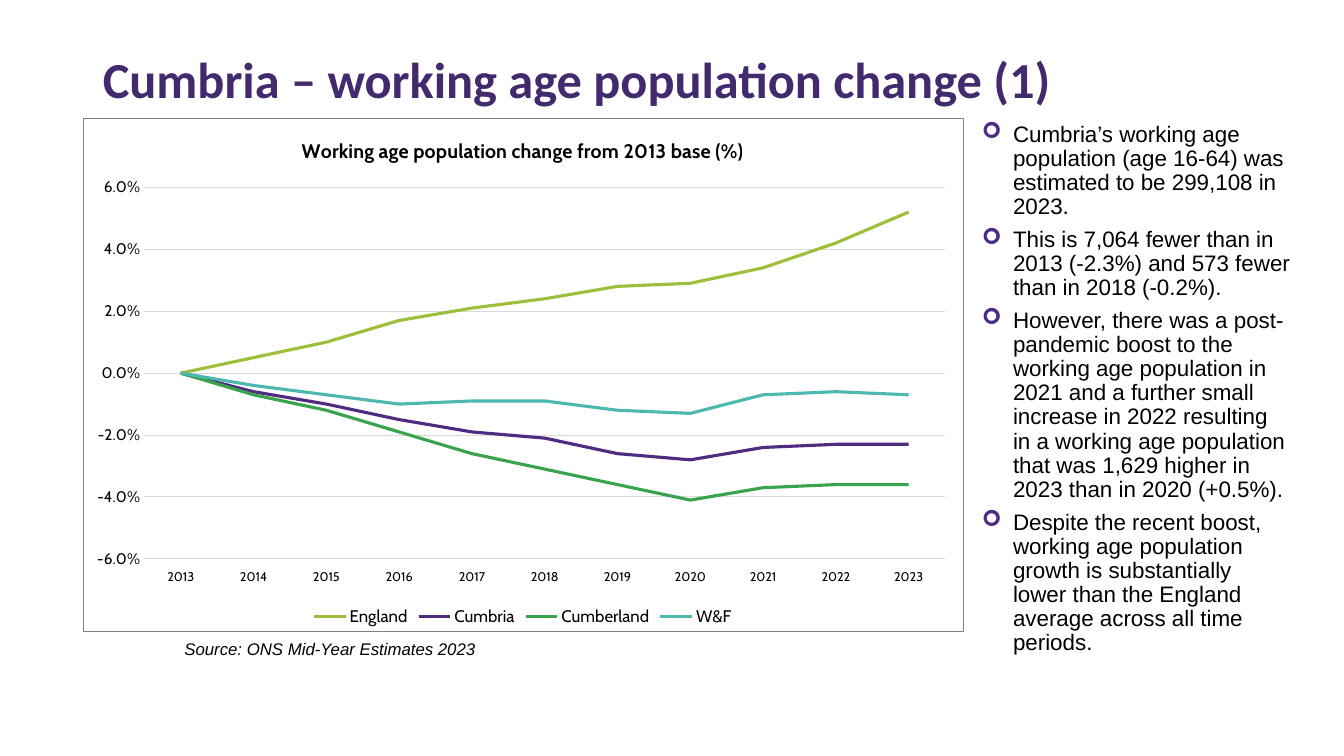
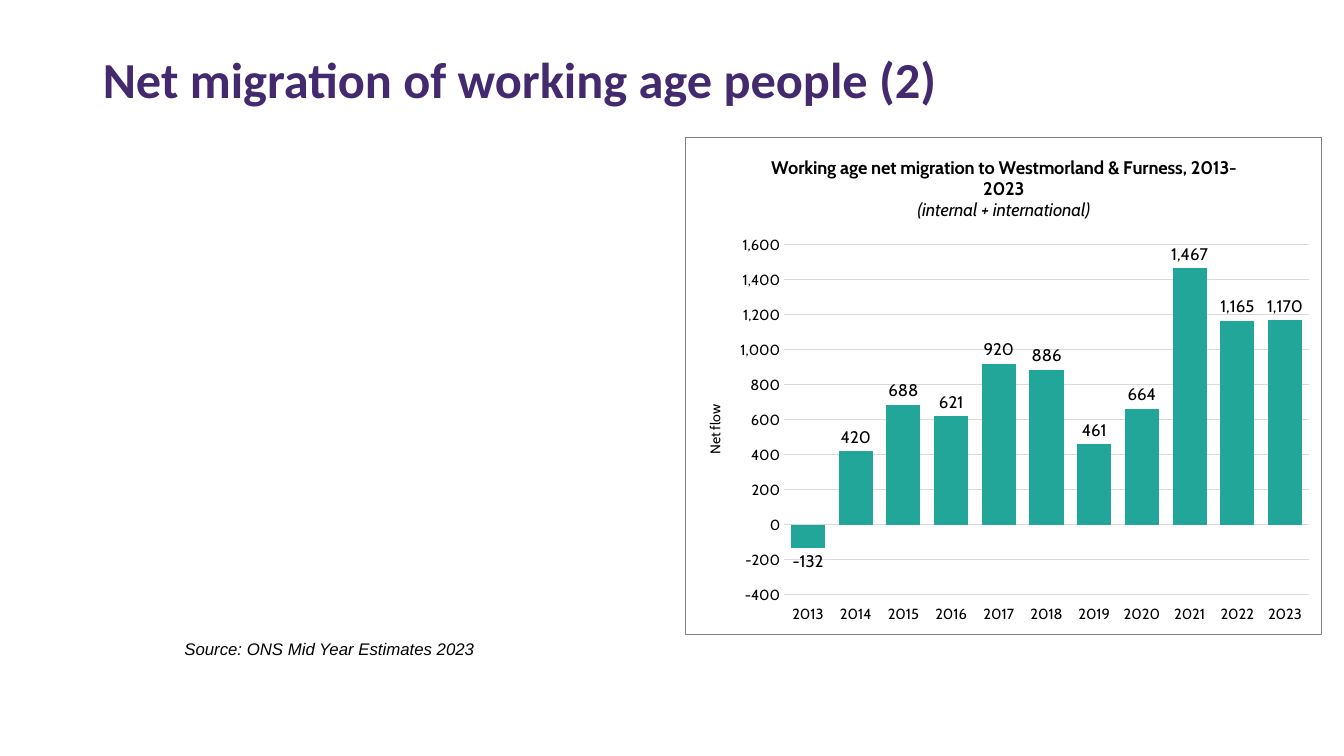
from lxml import etree
from pptx import Presentation
from pptx import util as u
from pptx.chart import data as chart_data
from pptx.dml import color
from pptx.enum import chart as ch, text
from pptx.oxml import ns

COLORS = {
    "title": "43296E", "bullet": "4F2B81", "text": "000000", "white": "FFFFFF",
    "grid": "D9D9D9", "border": "808080", "England": "9DBF3B", "Cumbria": "4F2B81",
    "Cumberland": "39A34E", "W&F": "4DB8AD", "migration": "21A699",
}
WIDTH, HEIGHT = u.Inches(13.33), u.Inches(7.5)
COLUMNS, ROWS = 100, 75
TITLE_BOX = (6.9, 4, 86.25, 8.3)
SOURCE_BOX = (12.98, 62.9, 25.2, 3)
YEARS = [str(year) for year in range(2013, 2024)]
POPULATION = {
    "England": [0, 0.005, 0.01, 0.017, 0.021, 0.024, 0.028, 0.029, 0.034, 0.042, 0.052],
    "Cumbria": [0, -0.006, -0.01, -0.015, -0.019, -0.021, -0.026, -0.028, -0.024, -0.023, -0.023],
    "Cumberland": [0, -0.007, -0.012, -0.019, -0.026, -0.031, -0.036, -0.041, -0.037, -0.036, -0.036],
    "W&F": [0, -0.004, -0.007, -0.01, -0.009, -0.009, -0.012, -0.013, -0.007, -0.006, -0.007],
}
MIGRATION = {"Series 1": [-132, 420, 688, 621, 920, 886, 461, 664, 1467, 1165, 1170]}
FINDINGS = [
    "Cumbria’s working age population (age 16-64) was estimated to be 299,108 in 2023.",
    "This is 7,064 fewer than in 2013 (-2.3%) and 573 fewer than in 2018 (-0.2%).",
    "However, there was a post-pandemic boost to the working age population in 2021 and a further "
    "small increase in 2022 resulting in a working age population that was 1,629 higher in 2023 "
    "than in 2020 (+0.5%).",
    "Despite the recent boost, working age population growth is substantially lower than the "
    "England average across all time periods.",
]


def rgb(name):
    """Return the named colour."""
    return color.RGBColor.from_string(COLORS[name])


def place(box):
    """Turn a box in grid columns and rows into slide lengths."""
    left, top, width, height = box
    return (int(WIDTH * left / COLUMNS), int(HEIGHT * top / ROWS),
            int(WIDTH * width / COLUMNS), int(HEIGHT * height / ROWS))


def move(shape, box):
    """Move a placeholder into a grid box."""
    shape.left, shape.top, shape.width, shape.height = place(box)


def style(font, name, size, tone="text", bold=False, italic=False):
    """Set the whole look of a font."""
    font.name, font.size = name, u.Pt(size)
    font.bold, font.italic = bold, italic
    font.color.rgb = rgb(tone)


def add_run(paragraph, words, *look, **options):
    """Add one styled run to a paragraph."""
    run = paragraph.add_run()
    run.text = words
    style(run.font, *look, **options)


def add_page(presentation, title, source, layout):
    """Add a slide with its title and source line."""
    slide = presentation.slides.add_slide(presentation.slide_layouts[layout])
    move(slide.shapes.title, TITLE_BOX)
    frame = slide.shapes.title.text_frame
    frame.vertical_anchor = text.MSO_ANCHOR.MIDDLE
    frame.auto_size = text.MSO_AUTO_SIZE.NONE
    paragraph = frame.paragraphs[0]
    paragraph.alignment = text.PP_ALIGN.LEFT
    paragraph.line_spacing = 0.9
    add_run(paragraph, title, "Calibri", 36, "title", bold=True)
    frame = slide.shapes.add_textbox(*place(SOURCE_BOX)).text_frame
    frame.word_wrap = True
    frame.auto_size = text.MSO_AUTO_SIZE.SHAPE_TO_FIT_TEXT
    add_run(frame.paragraphs[0], source, "Arial", 12, italic=True)
    return slide


def add_bullet(paragraph):
    """Give a paragraph a coloured arrow bullet with a hanging indent."""
    properties = paragraph._p.get_or_add_pPr()
    indent = u.Inches(0.31)
    properties.set("marL", str(indent))
    properties.set("indent", str(-indent))
    tint = etree.SubElement(properties, ns.qn("a:buClr"))
    etree.SubElement(tint, ns.qn("a:srgbClr"), val=COLORS["bullet"])
    etree.SubElement(properties, ns.qn("a:buFont"), typeface="Wingdings")
    etree.SubElement(properties, ns.qn("a:buChar"), char="➢")


def fill_findings(body, box, findings):
    """Write the bulleted findings into the body placeholder."""
    move(body, box)
    frame = body.text_frame
    frame.auto_size = text.MSO_AUTO_SIZE.NONE
    for index, finding in enumerate(findings):
        paragraph = frame.add_paragraph() if index else frame.paragraphs[0]
        add_bullet(paragraph)
        paragraph.line_spacing = 0.9
        paragraph.space_before = u.Pt(6 if index else 0)
        add_run(paragraph, finding, "Arial", 16)


def frame_chart(chart):
    """Give the chart area a white fill and a thin border."""
    area = etree.Element(ns.qn("c:spPr"))
    fill = etree.SubElement(area, ns.qn("a:solidFill"))
    etree.SubElement(fill, ns.qn("a:srgbClr"), val=COLORS["white"])
    line = etree.SubElement(area, ns.qn("a:ln"), w=str(u.Pt(0.25)))
    fill = etree.SubElement(line, ns.qn("a:solidFill"))
    etree.SubElement(fill, ns.qn("a:srgbClr"), val=COLORS["border"])
    chart._chartSpace.find(ns.qn("c:txPr")).addprevious(area)


def lay_out_plot(chart, shares):
    """Place the inner plot area by shares of the chart."""
    plot_area = chart._chartSpace.chart.plotArea
    for layout in plot_area.findall(ns.qn("c:layout")):
        plot_area.remove(layout)
    layout = etree.Element(ns.qn("c:layout"))
    manual = etree.SubElement(layout, ns.qn("c:manualLayout"))
    settings = [("layoutTarget", "inner"), ("xMode", "edge"), ("yMode", "edge")]
    for tag, value in settings + list(zip("xywh", shares)):
        etree.SubElement(manual, ns.qn("c:" + tag), val=str(value))
    plot_area.insert(0, layout)


def add_year_chart(slide, kind, box, plot_shares, series, titles, scale, number_format, sizes):
    """Add a titled chart by year with the shared axes and frame."""
    content = chart_data.CategoryChartData(number_format=number_format)
    content.categories = YEARS
    for name, values in series.items():
        content.add_series(name, values)
    chart = slide.shapes.add_chart(kind, *place(box), content).chart
    style(chart.font, "Cabin", 10)
    frame_chart(chart)
    lay_out_plot(chart, plot_shares)
    chart.has_legend = False
    chart.has_title = True
    frame = chart.chart_title.text_frame
    for index, (words, size, bold) in enumerate(titles):
        paragraph = frame.add_paragraph() if index else frame.paragraphs[0]
        add_run(paragraph, words, "Cabin", size, bold=bold, italic=not bold)
    for axis, size in zip((chart.category_axis, chart.value_axis), sizes):
        style(axis.tick_labels.font, "Cabin", size)
        axis.major_tick_mark = axis.minor_tick_mark = ch.XL_TICK_MARK.NONE
    years, amounts = chart.category_axis, chart.value_axis
    years.tick_label_position = ch.XL_TICK_LABEL_POSITION.LOW
    amounts.has_major_gridlines = True
    for line in (years.format.line, amounts.major_gridlines.format.line):
        line.color.rgb = rgb("grid")
        line.width = u.Pt(0.75)
    amounts.format.line.fill.background()
    amounts.minimum_scale, amounts.maximum_scale, amounts.major_unit = scale
    amounts.tick_labels.number_format = number_format
    amounts.tick_labels.number_format_is_linked = False
    chart.plots[0].vary_by_categories = False
    return chart


def add_population_chart(slide, box):
    """Add the line chart of population change."""
    chart = add_year_chart(
        slide, ch.XL_CHART_TYPE.LINE, box, (0.07, 0.135, 0.91, 0.725), POPULATION,
        [("Working age population change from 2013 base (%)", 14, True)],
        (-0.06, 0.06, 0.02), "0.0%", (9, 11))
    chart.has_legend = True
    chart.legend.position = ch.XL_LEGEND_POSITION.BOTTOM
    chart.legend.include_in_layout = False
    style(chart.legend.font, "Cabin", 12)
    for series in chart.plots[0].series:
        series.smooth = False
        series.marker.style = ch.XL_MARKER_STYLE.NONE
        series.format.line.color.rgb = rgb(series.name)
        series.format.line.width = u.Pt(2.25)


def add_migration_chart(slide, box):
    """Add the column chart of net migration."""
    chart = add_year_chart(
        slide, ch.XL_CHART_TYPE.COLUMN_CLUSTERED, box, (0.155, 0.217, 0.825, 0.705), MIGRATION,
        [("Working age net migration to Westmorland & Furness, 2013-2023", 13, True),
         ("(internal + international)", 13, False)],
        (-400, 1600, 200), "#,##0", (10.5, 10.5))
    axis_frame = chart.value_axis.axis_title.text_frame
    axis_frame._txBody.bodyPr.set("rot", "-5400000")
    add_run(axis_frame.paragraphs[0], "Net flow", "Cabin", 10)
    plot = chart.plots[0]
    plot.gap_width, plot.overlap = 40, -27
    columns = plot.series[0]
    columns.invert_if_negative = False
    columns.format.fill.solid()
    columns.format.fill.fore_color.rgb = rgb("migration")
    labels = columns.data_labels
    labels.show_value = True
    labels.position = ch.XL_LABEL_POSITION.OUTSIDE_END
    style(labels.font, "Cabin", 12)


def main():
    """Build and save the presentation."""
    presentation = Presentation()
    presentation.slide_width, presentation.slide_height = WIDTH, HEIGHT
    slide = add_page(presentation, "Cumbria – working age population change (1)",
                     "Source: ONS Mid-Year Estimates 2023", 1)
    fill_findings(slide.placeholders[1], (72.3, 11.7, 24.5, 54.2), FINDINGS)
    add_population_chart(slide, (6.15, 11.7, 65.5, 50.9))
    slide = add_page(presentation, "Net migration of working age people (2)",
                     "Source: ONS Mid Year Estimates 2023", 5)
    add_migration_chart(slide, (51, 13.6, 47.35, 49.3))
    presentation.save("out.pptx")


if __name__ == "__main__":
    main()
